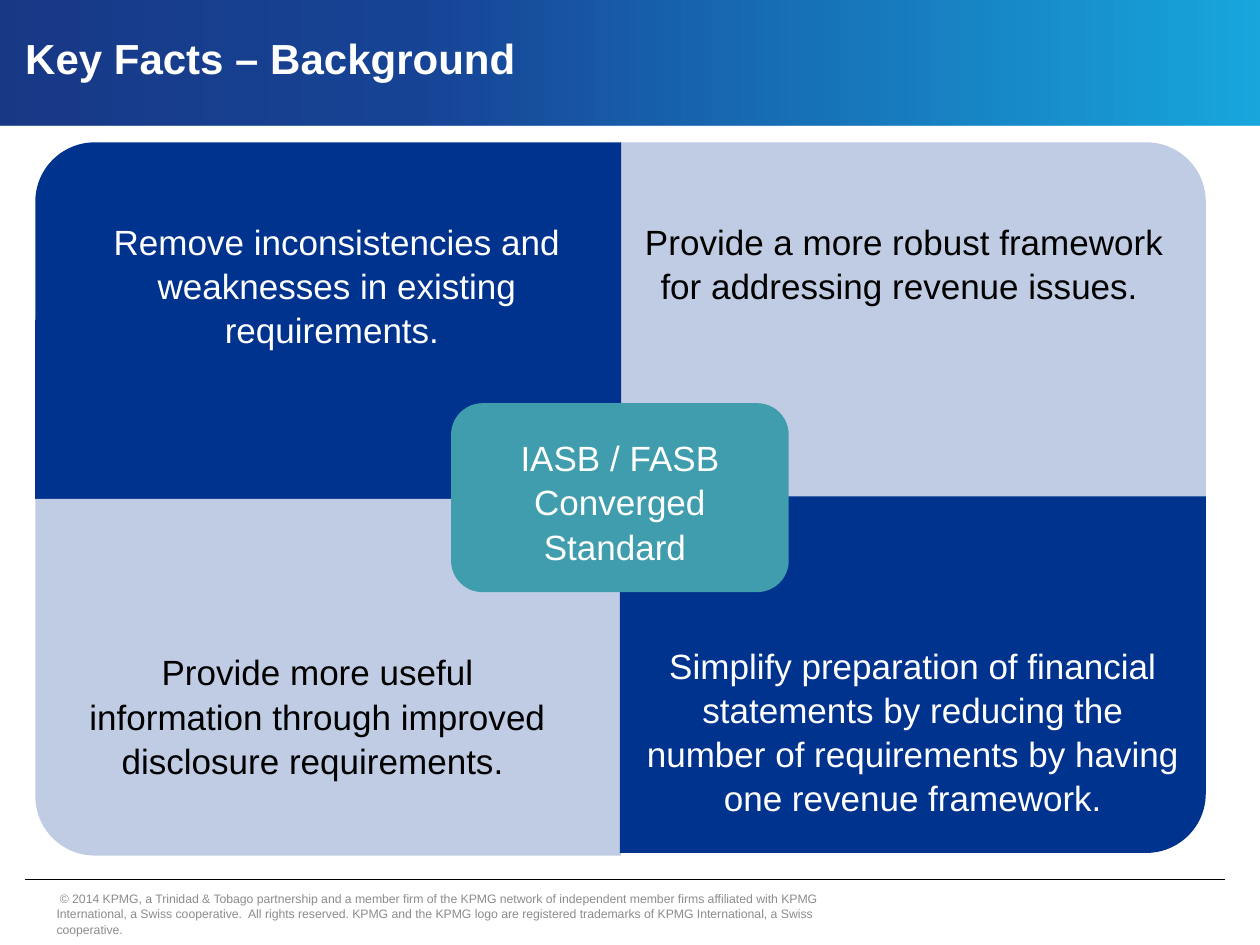
from lxml import etree
from pptx import Presentation
from pptx.dml.color import RGBColor
from pptx.enum.shapes import MSO_CONNECTOR as LINE, MSO_SHAPE as SHAPE
from pptx.enum.text import MSO_ANCHOR as ANCHOR, PP_ALIGN as ALIGN
from pptx.oxml import parse_xml
from pptx.oxml.ns import qn
from pptx.util import Inches, Pt

HEX = {"navy": "00338D", "pale": "BFCCE3", "teal": "409DAD", "white": "FFFFFF",
       "black": "000000", "gray": "8C8C8C"}
STOPS = [(0, "00257A"), (35, "00338D"), (100, "009FDA")]
NS = "http://schemas.openxmlformats.org/drawingml/2006/main"

deck = Presentation()
deck.slide_width, deck.slide_height = Inches(10), Inches(7.5)
slide = deck.slides.add_slide(deck.slide_layouts[6])
shapes = slide.shapes


def color(name):
    return RGBColor.from_string(HEX[name])


def write(shape, text, tone, size=20, bold=False, align=ALIGN.CENTER,
          anchor=ANCHOR.TOP, space=1.05, **margins):
    """Put one styled paragraph in a shape; margins are in inches."""
    frame = shape.text_frame
    frame.word_wrap = True
    frame.vertical_anchor = anchor
    for side, gap in margins.items():
        setattr(frame, "margin_" + side, Inches(gap))
    para = frame.paragraphs[0]
    para.alignment, para.line_spacing = align, space
    run = para.add_run()
    run.text = text
    for key, value in {"name": "Arial", "size": Pt(size), "bold": bold}.items():
        setattr(run.font, key, value)
    run.font.color.rgb = color(tone)


# Header band with a slanted right end
pen = shapes.build_freeform(0, 0, scale=Inches(1))
pen.add_line_segments([(0, 0.91), (9.73, 0.91), (10, 0)], close=True)
band = pen.convert_to_shape()
band.shadow.inherit = False
band.line.fill.background()
stops = "".join(
    f'<a:gs pos="{spot * 1000}"><a:srgbClr val="{tone}"><a:alpha val="90000"/></a:srgbClr></a:gs>'
    for spot, tone in STOPS)
fade = parse_xml(f'<a:gradFill xmlns:a="{NS}" rotWithShape="1"><a:gsLst>{stops}</a:gsLst>'
                 '<a:lin ang="0" scaled="0"/></a:gradFill>')
band._element.spPr.find(qn("a:custGeom")).addnext(fade)

rule = shapes.add_connector(LINE.STRAIGHT, Inches(0.2), Inches(6.98), Inches(9.72), Inches(6.98))
rule.line.color.rgb = color("black")
rule.line.width = Pt(0.25)
etree.SubElement(rule._element.spPr, qn("a:effectLst"))

title = shapes.add_textbox(Inches(0.2), 0, Inches(7.55), Inches(0.92))
write(title, "Key Facts – Background", "white", 24, True, ALIGN.LEFT, ANCHOR.MIDDLE, 1,
      left=0, top=0, right=0, bottom=0)

foot = shapes.add_textbox(Inches(0.35), Inches(7), Inches(6.75), Inches(0.5))
write(foot, " © 2014 KPMG, a Trinidad & Tobago partnership and a member firm of the KPMG network "
      "of independent member firms affiliated with KPMG International, a Swiss cooperative.  "
      "All rights reserved. KPMG and the KPMG logo are registered trademarks of KPMG "
      "International, a Swiss cooperative.", "gray", 7, align=ALIGN.LEFT, anchor=ANCHOR.MIDDLE)

# Four quadrants, each with its rounded corner outward, and the centre block
blocks = [
    (SHAPE.ROUND_1_RECTANGLE, 4.92, 1.13, 4.65, 2.83, "pale", {}),
    (SHAPE.ROUND_1_RECTANGLE, 0.28, 1.13, 4.65, 2.83, "navy", {"flipH": "1"}),
    (SHAPE.ROUND_1_RECTANGLE, 0.28, 3.96, 4.65, 2.83, "pale", {"rot": "10800000"}),
    (SHAPE.ROUND_1_RECTANGLE, 4.92, 3.94, 4.65, 2.83, "navy", {"flipV": "1"}),
    (SHAPE.ROUNDED_RECTANGLE, 3.58, 3.2, 2.68, 1.5, "teal", {}),
]
made = []
for kind, x, y, w, h, tone, turn in blocks:
    block = shapes.add_shape(kind, Inches(x), Inches(y), Inches(w), Inches(h))
    block.shadow.inherit = False
    block.fill.solid()
    block.fill.fore_color.rgb = color(tone)
    block.line.fill.background()
    for key, value in turn.items():
        block._element.spPr.xfrm.set(key, value)
    made.append(block)

write(made[0], "Provide a more robust framework for addressing revenue issues. ", "black", top=0.6)
write(made[1], "Remove inconsistencies and weaknesses in existing requirements. ", "white", top=0.6)
write(made[4], "IASB / FASB Converged Standard ", "white", anchor=ANCHOR.MIDDLE, top=0.1)

# Words of the two lower quadrants
for x, y, w, h, tone, text in [
    (0.51, 5.1, 4.02, 1.45, "black",
     "Provide more useful information through improved disclosure requirements. "),
    (5, 5.05, 4.49, 1.45, "white",
     "Simplify preparation of financial statements by reducing the number of "
     "requirements by having one revenue framework."),
]:
    note = shapes.add_textbox(Inches(x), Inches(y), Inches(w), Inches(h))
    write(note, text, tone)

deck.save("out.pptx")
